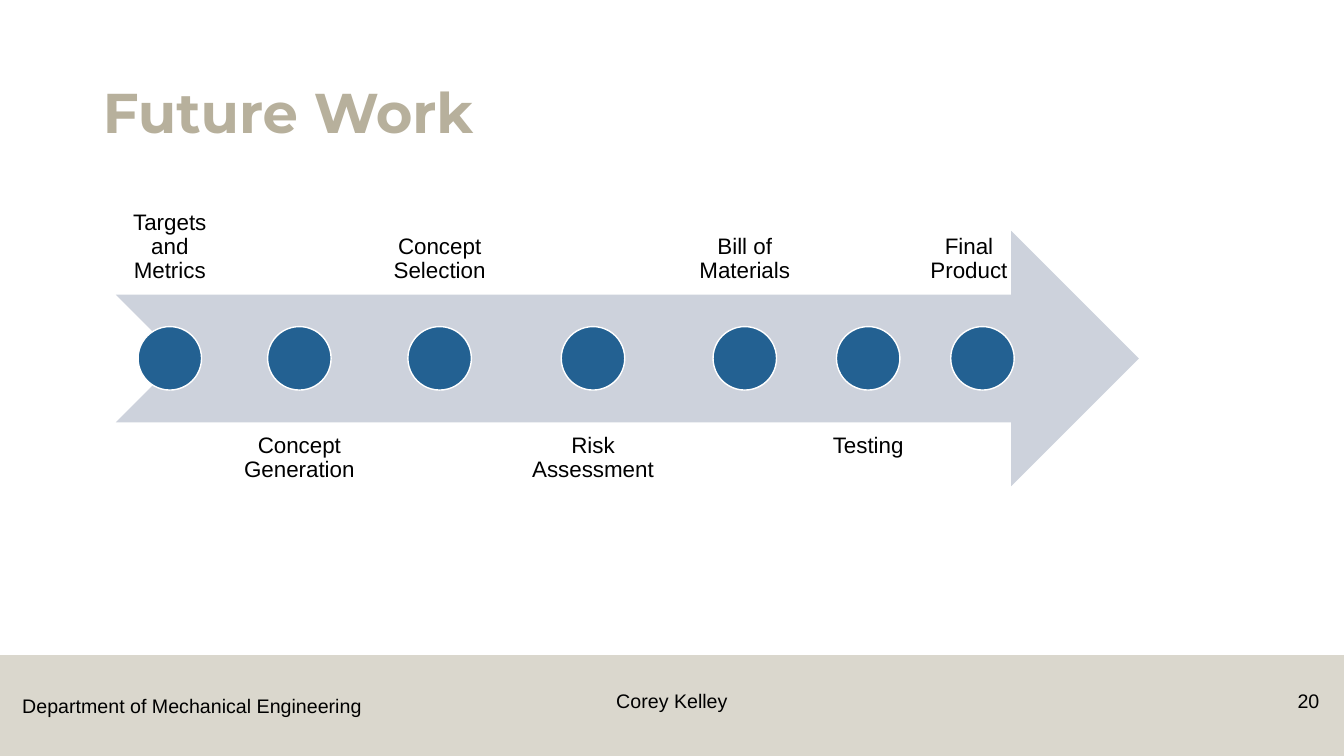
import pptx
import pptx.util
import pptx.dml.color
import pptx.enum.shapes
import pptx.enum.text
import pptx.oxml
import pptx.oxml.ns
from pptx.util import Cm

ALIGN = pptx.enum.text.PP_ALIGN
ANCHOR = pptx.enum.text.MSO_ANCHOR
SHAPE = pptx.enum.shapes.MSO_SHAPE


def paint(color_format, color):
    color_format.rgb = pptx.dml.color.RGBColor.from_string(color)


def write(shape, text, size, color="000000", font="Arial", bold=False,
          frame_format=None, paragraph_format=None):
    frame = shape.text_frame
    for name, value in {"word_wrap": True, **(frame_format or {})}.items():
        setattr(frame, name, value)
    paragraph = frame.paragraphs[0]
    paragraph.text = text
    for name, value in (paragraph_format or {}).items():
        setattr(paragraph, name, value)
    font_format = {"name": font, "size": pptx.util.Pt(size), "bold": bold}
    for name, value in font_format.items():
        setattr(paragraph.runs[0].font, name, value)
    paint(paragraph.runs[0].font.color, color)


presentation = pptx.Presentation()
presentation.slide_width, presentation.slide_height = Cm(33.87), Cm(19.05)
slide = presentation.slides.add_slide(presentation.slide_layouts[5])
shapes = slide.shapes

# Title
title = shapes.title
title.left, title.top, title.width, title.height = Cm(2.34), Cm(1.02), Cm(29.21), Cm(2.77)
write(title, "Future Work", 40, "B7B09C", "Montserrat", True,
      {"vertical_anchor": ANCHOR.BOTTOM},
      {"alignment": ALIGN.LEFT, "line_spacing": 0.9})

# Half-transparent footer band
band = shapes.add_shape(SHAPE.RECTANGLE, Cm(0), Cm(16.51), Cm(33.87), Cm(2.54))
band.shadow.inherit = False
band.fill.solid()
paint(band.fill.fore_color, "B7B09C")
band.line.fill.background()
band_color = band.fill._xPr.find(".//" + pptx.oxml.ns.qn("a:srgbClr"))
band_color.append(pptx.oxml.parse_xml(
    f'<a:alpha {pptx.oxml.ns.nsdecls("a")} val="50000"/>'))

# Footer texts: text, left, top, width, alignment, wrap
footers = [
    ("Department of Mechanical Engineering", 0.31, 17.35, 9.12, ALIGN.LEFT, False),
    ("Corey Kelley", 11.22, 17.24, 11.43, ALIGN.CENTER, True),
    ("20", 31.55, 17.24, 1.95, ALIGN.RIGHT, True),
]
for text, left, top, width, alignment, wrap in footers:
    footer = shapes.add_textbox(Cm(left), Cm(top), Cm(width), Cm(1))
    write(footer, text, 14, frame_format={"word_wrap": wrap},
          paragraph_format={"alignment": alignment})

# Timeline arrow
arrow = shapes.add_shape(SHAPE.NOTCHED_RIGHT_ARROW, Cm(2.92), Cm(5.82), Cm(25.78), Cm(6.43))
arrow.shadow.inherit = False
arrow.fill.solid()
paint(arrow.fill.fore_color, "CDD2DC")
arrow.line.fill.background()

# Milestones: label, column width, label shift
milestones = [
    ("Targets and Metrics", 2.74, 0),
    ("Concept Generation", 3.51, 0),
    ("Concept Selection", 3.28, 0),
    ("Risk Assessment", 4.17, 0),
    ("Bill of Materials", 3.2, 0),
    ("Testing", 2.74, 0),
    ("Final Product", 2.74, -0.34),
]
column_gap, label_height, dot_size = 0.14, 6.43, 1.6
inset = Cm(0.3)
column_left = 2.91
for index, (text, width, shift) in enumerate(milestones):
    # Labels alternate above and below the arrow
    above = index % 2 == 0
    label = shapes.add_textbox(Cm(column_left + shift), Cm(1.02 if above else 10.64),
                               Cm(width), Cm(label_height))
    write(label, text, 16,
          frame_format={"vertical_anchor": ANCHOR.BOTTOM if above else ANCHOR.TOP,
                        "margin_left": inset, "margin_right": inset,
                        "margin_top": inset, "margin_bottom": inset},
          paragraph_format={"alignment": ALIGN.CENTER, "line_spacing": 0.9})

    dot = shapes.add_shape(SHAPE.OVAL, Cm(column_left + (width - dot_size) / 2), Cm(8.23),
                           Cm(dot_size), Cm(dot_size))
    dot.shadow.inherit = False
    dot.fill.solid()
    paint(dot.fill.fore_color, "236192")
    paint(dot.line.color, "FFFFFF")
    dot.line.width = pptx.util.Pt(1)
    column_left += width + column_gap

presentation.save("out.pptx")
